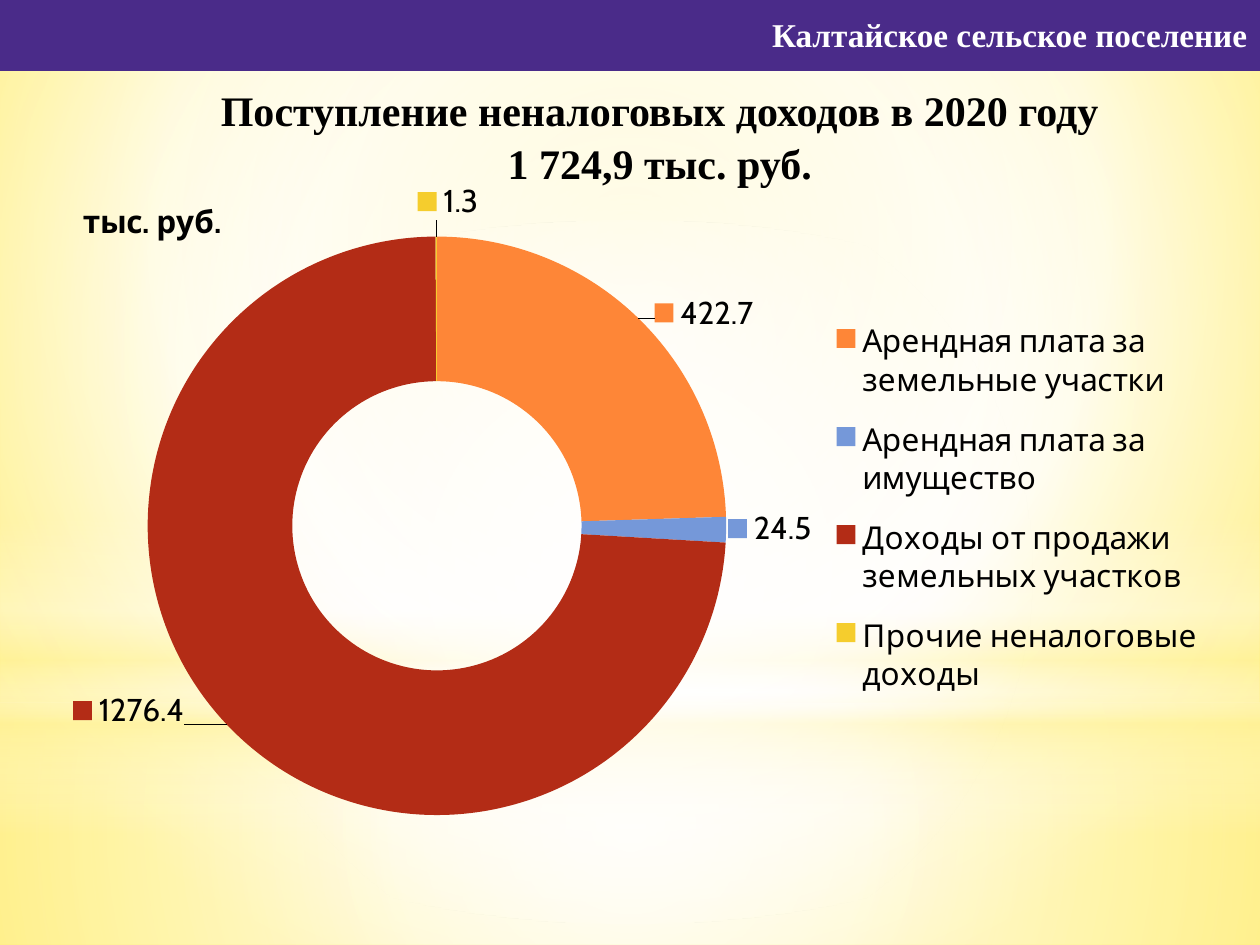
from lxml.etree import SubElement
from pptx import Presentation
from pptx.chart.data import CategoryChartData
from pptx.dml.color import RGBColor
from pptx.enum.chart import XL_CHART_TYPE, XL_LEGEND_POSITION
from pptx.enum.shapes import MSO_SHAPE
from pptx.enum.text import MSO_ANCHOR, PP_ALIGN
from pptx.oxml import parse_xml
from pptx.oxml.ns import nsdecls, qn
from pptx.util import Cm, Pt

BLACK = RGBColor(0x00, 0x00, 0x00)
WHITE = RGBColor(0xFF, 0xFF, 0xFF)
PURPLE = RGBColor(0x4A, 0x2B, 0x89)
ORANGE = RGBColor(0xFE, 0x86, 0x37)
BLUE = RGBColor(0x75, 0x98, 0xD9)
RED = RGBColor(0xB3, 0x2C, 0x16)
YELLOW = RGBColor(0xF5, 0xCD, 0x2D)
CREAM = RGBColor(0xFF, 0xF3, 0x9D)
PALE_YELLOW = RGBColor(0xFF, 0xF1, 0x8D)
WARM_YELLOW = RGBColor(0xFF, 0xE9, 0x4E)

WIDTH, HEIGHT = 25.4, 19.05
UNIT = "тыс. руб."
CENTER = (50, 50, 50, 50)

INCOMES = [
    ("Арендная плата за земельные участки", 422.7, ORANGE, (0.1, -0.08)),
    ("Арендная плата за имущество", 24.5, BLUE, (0.1, 0)),
    ("Доходы от продажи земельных участков", 1276.4, RED, (-0.13, 0.05)),
    ("Прочие неналоговые доходы", 1.3, YELLOW, (0.01, -0.15)),
]

GLOWS = [
    (MSO_SHAPE.RECTANGLE, 14.17, 4.88, [(0, WHITE, 91), (37, WHITE, 76), (100, CREAM, 79)], CENTER),
    (MSO_SHAPE.RECTANGLE, 0, 14.17, [(0, WHITE, 89), (48, WHITE, 62), (100, CREAM, 79)], CENTER),
    (MSO_SHAPE.RECTANGLE, 10.46, 6.35,
     [(0, WHITE, 0), (29, WHITE, 30), (45, CREAM, 40), (55, WHITE, 26), (65, CREAM, 60), (100, WHITE, 0)], None),
    (MSO_SHAPE.OVAL, 4.45, 14.17, [(0, WHITE, 100), (56, WHITE, 0)], CENTER),
]


def set_gradient(element, stops, focus):
    gradient = element.find(".//" + qn("a:gradFill"))
    for child in list(gradient):
        gradient.remove(child)
    stop_list = SubElement(gradient, qn("a:gsLst"))
    for position, color, opacity in stops:
        stop = SubElement(stop_list, qn("a:gs"), pos=str(position * 1000))
        shade = SubElement(stop, qn("a:srgbClr"), val=str(color))
        if opacity < 100:
            SubElement(shade, qn("a:alpha"), val=str(opacity * 1000))
    if focus is None:
        SubElement(gradient, qn("a:lin"), ang="5400000", scaled="0")
    else:
        circle = SubElement(gradient, qn("a:path"), path="circle")
        edges = {side: str(value * 1000) for side, value in zip("ltrb", focus)}
        SubElement(circle, qn("a:fillToRect"), **edges)


def set_layout(element, after, **values):
    for old_layout in element.findall(qn("c:layout")):
        element.remove(old_layout)
    items = "".join(f'<c:{name} val="{value}"/>' for name, value in values.items())
    layout = parse_xml(f"<c:layout {nsdecls('c')}><c:manualLayout>{items}</c:manualLayout></c:layout>")
    index = 0 if after is None else element.index(element.find(qn(after))) + 1
    element.insert(index, layout)


class SlideBuilder:
    heading_font = "Times New Roman"
    chart_font = "Cabin"

    def __init__(self, presentation):
        self.slide = presentation.slides.add_slide(presentation.slide_layouts[5])

    def format_text(self, paragraph, size, color, alignment):
        paragraph.alignment = alignment
        for run in paragraph.runs:
            self.format_font(run.font, self.heading_font, size, color, True)

    def format_font(self, font, name, size, color, bold):
        font.name = name
        font.size = Pt(size)
        font.bold = bold
        font.color.rgb = color

    def background(self, stops, focus):
        self.slide.background.fill.gradient()
        set_gradient(self.slide.element, stops, focus)

    def shape(self, kind, top, height):
        shape = self.slide.shapes.add_shape(kind, 0, Cm(top), Cm(WIDTH), Cm(height))
        shape.shadow.inherit = False
        return shape

    def glow(self, kind, top, height, stops, focus):
        shape = self.shape(kind, top, height)
        shape.line.fill.background()
        shape.fill.gradient()
        set_gradient(shape.element, stops, focus)

    def band(self, text):
        shape = self.shape(MSO_SHAPE.RECTANGLE, 0, 1.4)
        shape.fill.solid()
        shape.fill.fore_color.rgb = PURPLE
        shape.line.color.rgb = PURPLE
        shape.line.width = Pt(2)
        shape.text_frame.vertical_anchor = MSO_ANCHOR.MIDDLE
        shape.text_frame.text = text
        self.format_text(shape.text_frame.paragraphs[0], 19, WHITE, PP_ALIGN.RIGHT)

    def title(self, text):
        title = self.slide.shapes.title
        title.left, title.top, title.width, title.height = Cm(1.5), Cm(1.52), Cm(23.6), Cm(2.31)
        title.text_frame.text = text
        title.text_frame.word_wrap = True
        title.text_frame.vertical_anchor = MSO_ANCHOR.TOP
        paragraph = title.text_frame.paragraphs[0]
        paragraph.line_spacing = 1.05
        self.format_text(paragraph, 24, BLACK, PP_ALIGN.CENTER)
        self.slide.shapes.element.append(title.element)

    def doughnut(self, name, incomes):
        data = CategoryChartData()
        data.categories = [category for category, *_ in incomes]
        data.add_series(name, [value for _, value, *_ in incomes])
        chart = self.slide.shapes.add_chart(
            XL_CHART_TYPE.DOUGHNUT, Cm(1.09), Cm(3.33), Cm(23.39), Cm(14.4), data).chart
        self.format_font(chart.font, self.chart_font, 18, BLACK, False)

        chart.has_title = True
        chart.chart_title.text_frame.text = name
        run = chart.chart_title.text_frame.paragraphs[0].runs[0]
        self.format_font(run.font, self.chart_font, 18, BLACK, True)
        set_layout(chart.chart_title._element, "c:tx", xMode="edge", yMode="edge", x=0.02, y=0.04)

        chart.has_legend = True
        chart.legend.position = XL_LEGEND_POSITION.RIGHT
        chart.legend.include_in_layout = False
        set_layout(chart.legend._element, "c:legendPos", xMode="edge", yMode="edge",
                   x=0.67, y=0.19, w=0.32, h=0.58)
        plot_area = chart._chartSpace.find(".//" + qn("c:plotArea"))
        set_layout(plot_area, None, layoutTarget="inner", xMode="edge", yMode="edge",
                   x=0.08, y=0.1, w=0.5, h=0.81)
        self.slices(chart.plots[0].series[0], incomes)

    def slices(self, series, incomes):
        series.data_labels.show_value = True
        series.data_labels.show_legend_key = True
        for index, (_, _, color, _) in enumerate(incomes):
            point = series.points[index]
            point.format.fill.solid()
            point.format.fill.fore_color.rgb = color
            point.format.line.fill.background()
            self.format_font(point.data_label.font, self.chart_font, 18, BLACK, False)
        labels = series._element.findall(".//" + qn("c:dLbl"))
        for label, (_, _, _, (x, y)) in zip(labels, incomes):
            set_layout(label, "c:idx", x=x, y=y)
            label.find(qn("c:showLegendKey")).set("val", "1")


def main():
    presentation = Presentation()
    presentation.slide_width, presentation.slide_height = Cm(WIDTH), Cm(HEIGHT)
    builder = SlideBuilder(presentation)
    builder.background([(0, PALE_YELLOW, 100), (60, WHITE, 100), (100, WARM_YELLOW, 100)], (20, 10, 20, 60))
    for glow in GLOWS:
        builder.glow(*glow)
    builder.band("Калтайское сельское поселение")
    builder.title("Поступление неналоговых доходов в 2020 году\v1 724,9 тыс. руб.")
    builder.doughnut(UNIT, INCOMES)
    presentation.save("out.pptx")


if __name__ == "__main__":
    main()
